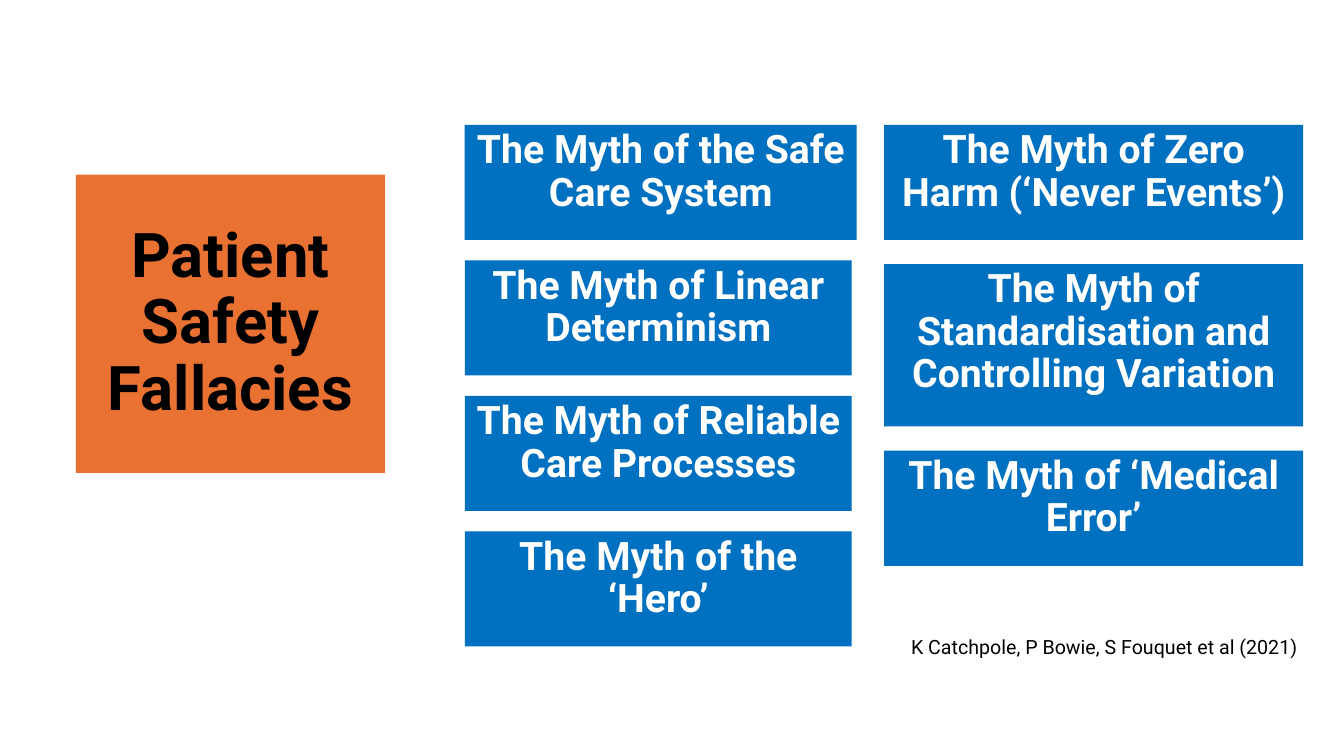
from pptx import Presentation
from pptx.dml.color import RGBColor
from pptx.enum.shapes import MSO_SHAPE
from pptx.enum.text import MSO_ANCHOR, MSO_AUTO_SIZE, PP_ALIGN
from pptx.util import Pt


def color(hex_code):
    return RGBColor.from_string(hex_code)


def write(shape, text, *, size, ink, bold=False, align=PP_ALIGN.LEFT,
          anchor=MSO_ANCHOR.TOP, spacing=1.0):
    frame = shape.text_frame
    frame.word_wrap = True
    frame.auto_size = MSO_AUTO_SIZE.NONE
    frame.vertical_anchor = anchor
    frame.text = text
    paragraph = frame.paragraphs[0]
    paragraph.alignment = align
    paragraph.line_spacing = spacing
    paragraph.space_before = Pt(0)
    font = paragraph.runs[0].font
    font.name = "Roboto"
    font.size = Pt(size)
    font.bold = bold
    font.color.rgb = color(ink)


prs = Presentation()
prs.slide_width, prs.slide_height = Pt(960), Pt(540)
slide = prs.slides.add_slide(prs.slide_layouts[5])

heading = slide.shapes.title
heading.left, heading.top = Pt(54.2), Pt(124.8)
heading.width, heading.height = Pt(221), Pt(213)
heading.fill.solid()
heading.fill.fore_color.rgb = color("E97132")
write(heading, "Patient Safety Fallacies", size=44, ink="000000", bold=True,
      align=PP_ALIGN.CENTER, anchor=MSO_ANCHOR.MIDDLE, spacing=0.9)

FIRST_TOP = 89.2
SHORT, TALL = 82.2, 116

# Each column: left edge, gap between boxes, and (text, width, height) per myth
columns = [
    (332, 14.6, [
        ("The Myth of the Safe Care System", 280, SHORT),
        ("The Myth of Linear Determinism", 276.4, SHORT),
        ("The Myth of Reliable Care Processes", 276.4, SHORT),
        ("The Myth of the ‘Hero’", 276.4, SHORT),
    ]),
    (631.5, 17.3, [
        ("The Myth of Zero Harm (‘Never Events’)", 299.3, SHORT),
        ("The Myth of Standardisation and Controlling Variation", 299.3, TALL),
        ("The Myth of ‘Medical Error’", 299.3, SHORT),
    ]),
]

for left, gap, myths in columns:
    top = FIRST_TOP
    for myth, width, height in myths:
        box = slide.shapes.add_shape(
            MSO_SHAPE.RECTANGLE, Pt(left), Pt(top), Pt(width), Pt(height))
        box.shadow.inherit = False
        box.fill.solid()
        box.fill.fore_color.rgb = color("0070C0")
        box.line.fill.background()
        write(box, myth, size=28, ink="FFFFFF", bold=True,
              align=PP_ALIGN.CENTER, spacing=0.9)
        top += height + gap

citation = slide.shapes.add_textbox(Pt(643.7), Pt(450), Pt(307.4), Pt(24.5))
write(citation, "K Catchpole, P Bowie, S Fouquet et al (2021)", size=14, ink="000000")

prs.save("out.pptx")
